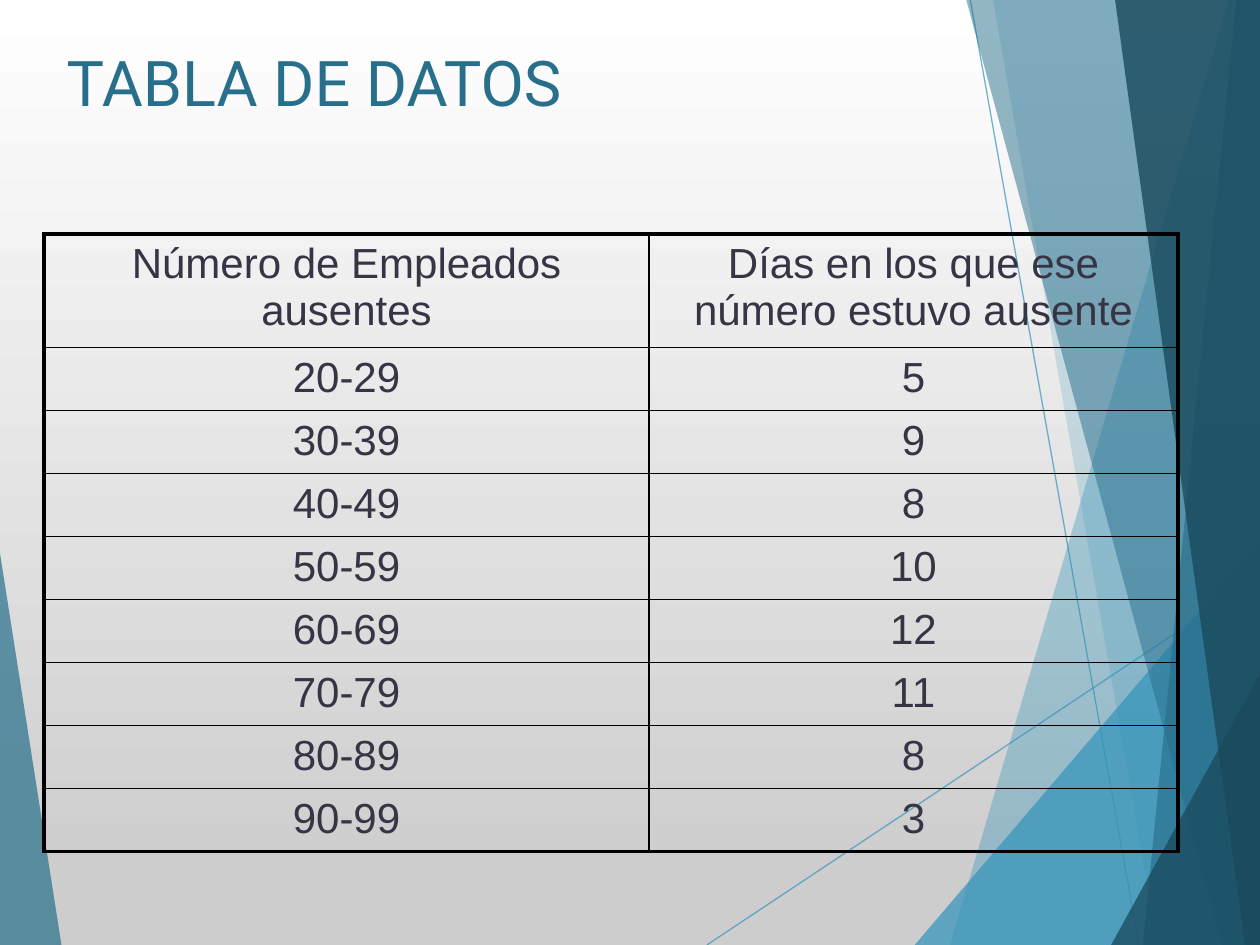
"""Build a slide with a table of employee absences over a faceted background."""
from lxml import etree
from pptx import Presentation
from pptx import util as u
from pptx.dml.color import RGBColor
from pptx.enum import shapes, text
from pptx.oxml import ns

WIDTH, HEIGHT = 25.4, 19.05
BLUE, TEAL, NAVY, INK = "3494BA", "276F8B", "1A4A5D", "373545"

RAYS = [
    ((14.25, HEIGHT), (25.43, 11.61)),
    ((19.56, 0), (22.96, HEIGHT)),
]
FACETS = [
    ([(24.77, 0), (19.15, HEIGHT), (WIDTH, HEIGHT), (WIDTH, 0)], BLUE, 36),
    ([(20.02, 0), (23.34, HEIGHT), (WIDTH, HEIGHT), (WIDTH, 0)], BLUE, 20),
    ([(18.44, HEIGHT), (WIDTH, 10.9), (WIDTH, HEIGHT)], BLUE, 72),
    ([(19.48, 0), (24.64, HEIGHT), (WIDTH, HEIGHT), (WIDTH, 0)], TEAL, 50),
    ([(24.92, 0), (23.04, HEIGHT), (WIDTH, HEIGHT), (WIDTH, 0)], TEAL, 66),
    ([(22.48, 0), (25.1, HEIGHT), (WIDTH, HEIGHT), (WIDTH, 0)], NAVY, 80),
    ([(22.4, HEIGHT), (WIDTH, 13.59), (WIDTH, HEIGHT)], NAVY, 76),
    ([(0, 11.15), (1.24, HEIGHT), (0, HEIGHT)], TEAL, 70),
]
ROWS = [
    ("Número de Empleados ausentes", "Días en los que ese número estuvo ausente"),
    ("20-29", "5"),
    ("30-39", "9"),
    ("40-49", "8"),
    ("50-59", "10"),
    ("60-69", "12"),
    ("70-79", "11"),
    ("80-89", "8"),
    ("90-99", "3"),
]


def color(value):
    return RGBColor.from_string(value)


def add_xml(parent, tag, **attributes):
    return etree.SubElement(parent, ns.qn(tag), attributes)


def set_opacity(shape, percent):
    for element in shape._element.xpath("./p:spPr//a:srgbClr"):
        add_xml(element, "a:alpha", val=str(percent * 1000))


class SlideBuilder:
    def __init__(self, slide):
        self.slide = slide
        self.title_font, self.body_font = "Roboto", "Arial"
        self.title_size, self.body_size = 36, 24
        self.outer_border, self.inner_border = 2.25, 1

    def background(self, stops):
        fill = self.slide.background.fill
        fill.gradient()
        fill.gradient_angle = 270
        for stop, (position, value) in zip(fill.gradient_stops, stops):
            stop.position = position
            stop.color.rgb = color(value)

    def ray(self, start, end):
        points = [u.Cm(value) for value in (*start, *end)]
        connector = self.slide.shapes.add_connector(shapes.MSO_CONNECTOR.STRAIGHT, *points)
        connector.line.color.rgb = color(BLUE)
        connector.line.width = u.Pt(0.75)
        set_opacity(connector, 70)
        add_xml(connector._element.spPr, "a:effectLst")

    def facet(self, corners, value, opacity):
        points = [(u.Cm(x), u.Cm(y)) for x, y in corners]
        builder = self.slide.shapes.build_freeform(*points[0])
        builder.add_line_segments(points[1:])
        shape = builder.convert_to_shape()
        shape.shadow.inherit = False
        shape.fill.solid()
        shape.fill.fore_color.rgb = color(value)
        shape.line.fill.background()
        set_opacity(shape, opacity)

    def add_text(self, paragraph, words, font, size, value):
        run = paragraph.add_run()
        run.text = words
        run.font.name = font
        run.font.size = u.Pt(size)
        run.font.color.rgb = color(value)

    def title(self, words, left, top, width, height):
        shape = self.slide.shapes.title
        shape.left, shape.top = u.Cm(left), u.Cm(top)
        shape.width, shape.height = u.Cm(width), u.Cm(height)
        shape.text_frame.vertical_anchor = text.MSO_ANCHOR.TOP
        paragraph = shape.text_frame.paragraphs[0]
        paragraph.alignment = text.PP_ALIGN.LEFT
        self.add_text(paragraph, words, self.title_font, self.title_size, TEAL)

    def borders(self, cell, outer_sides):
        properties = cell._tc.get_or_add_tcPr()
        for side in "LRTB":
            points = self.outer_border if side in outer_sides else self.inner_border
            line = add_xml(properties, f"a:ln{side}", w=str(u.Pt(points)))
            add_xml(add_xml(line, "a:solidFill"), "a:srgbClr", val="000000")

    def table(self, rows, left, top, widths, heights):
        frame = self.slide.shapes.add_table(
            len(rows), len(widths), u.Cm(left), u.Cm(top),
            u.Cm(sum(widths)), u.Cm(sum(heights)))
        table = frame.table
        table.first_row = table.horz_banding = False
        for column, width in zip(table.columns, widths):
            column.width = u.Cm(width)
        for row, height in zip(table.rows, heights):
            row.height = u.Cm(height)
        for i, row in enumerate(rows):
            for j, words in enumerate(row):
                cell = table.cell(i, j)
                edges = {"T": i == 0, "B": i == len(rows) - 1,
                         "L": j == 0, "R": j == len(row) - 1}
                self.borders(cell, [side for side, is_outer in edges.items() if is_outer])
                cell.fill.background()
                paragraph = cell.text_frame.paragraphs[0]
                paragraph.alignment = text.PP_ALIGN.CENTER
                self.add_text(paragraph, words, self.body_font, self.body_size, INK)


def main():
    presentation = Presentation()
    presentation.slide_width, presentation.slide_height = u.Cm(WIDTH), u.Cm(HEIGHT)
    builder = SlideBuilder(presentation.slides.add_slide(presentation.slide_layouts[5]))
    builder.background([(0, "FFFFFF"), (0.94, "CDCDCD")])
    for start, end in RAYS:
        builder.ray(start, end)
    for corners, value, opacity in FACETS:
        builder.facet(corners, value, opacity)
    builder.title("TABLA DE DATOS", 1.09, 0.74, 22.86, 3.18)
    builder.table(ROWS, 0.89, 4.72, [12.19, 10.67], [2.29] + [1.27] * (len(ROWS) - 1))
    presentation.save("out.pptx")


if __name__ == "__main__":
    main()
